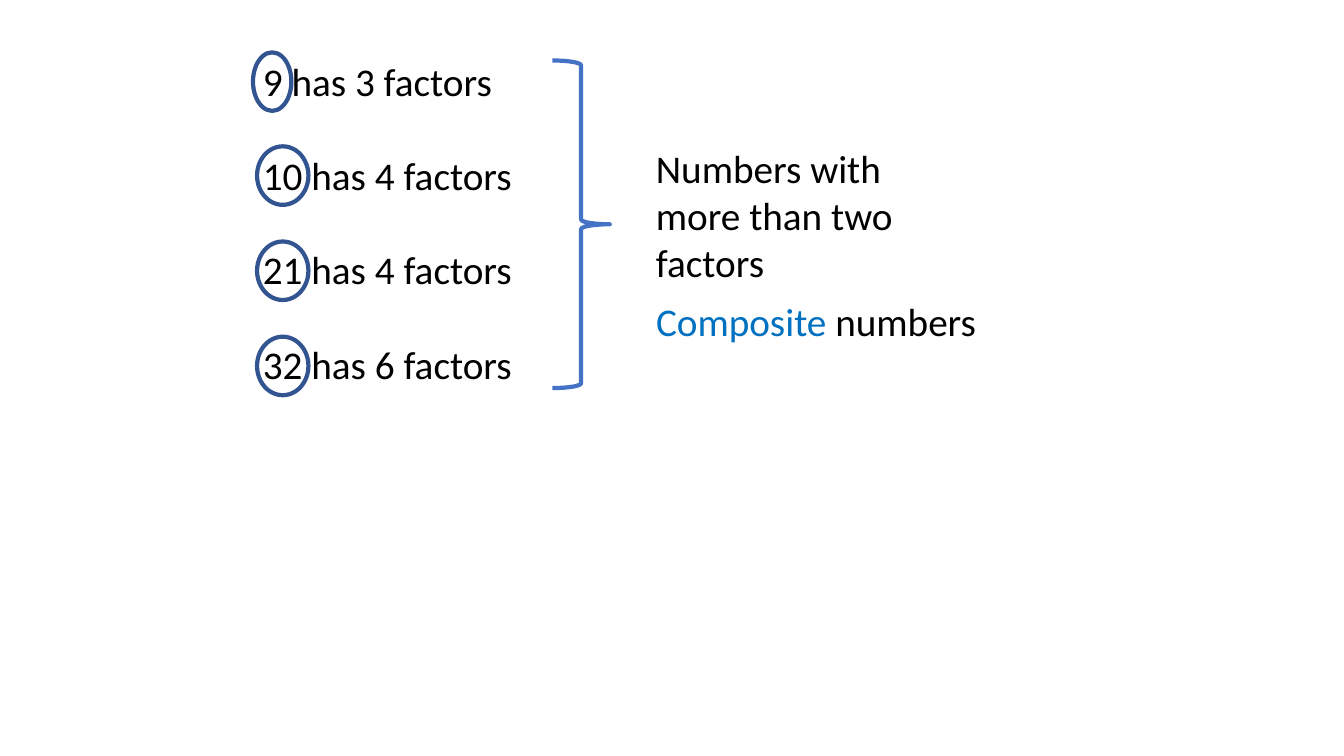
import dataclasses

import pptx
import pptx.dml.color
import pptx.enum.shapes
import pptx.slide
import pptx.util

Pt = pptx.util.Pt
SHAPES = pptx.enum.shapes.MSO_SHAPE

COLORS = {"text": "000000", "accent": "0070C0", "brace": "4472C4", "ring": "325491"}
FONT_NAME = "Calibri"
FONT_SIZE = 28
LINE_GAP = 33.7
RING_TOP = 104.5
RING_PITCH = 68


@dataclasses.dataclass(frozen=True)
class Box:
    left: float
    top: float
    width: float
    height: float

    def lengths(self) -> tuple[int, int, int, int]:
        return Pt(self.left), Pt(self.top), Pt(self.width), Pt(self.height)


@dataclasses.dataclass(frozen=True)
class Caption:
    box: Box
    lines: tuple[str, ...]
    gap: float = 0
    highlight: str = ""


@dataclasses.dataclass(frozen=True)
class Outline:
    box: Box
    preset: SHAPES
    color: str


def rgb(name: str) -> pptx.dml.color.RGBColor:
    return pptx.dml.color.RGBColor.from_string(COLORS[name])


def draw_caption(slide: pptx.slide.Slide, caption: Caption) -> None:
    frame = slide.shapes.add_textbox(*caption.box.lengths()).text_frame
    frame.text = "\n".join(caption.lines)
    frame.word_wrap = True
    for index, paragraph in enumerate(frame.paragraphs):
        paragraph.space_before = Pt(caption.gap if index else 0)
        if caption.highlight:
            rest = paragraph.text.removeprefix(caption.highlight)
            paragraph.text = caption.highlight
            paragraph.add_run().text = rest
        for run in paragraph.runs:
            run.font.name = FONT_NAME
            run.font.size = Pt(FONT_SIZE)
            run.font.color.rgb = rgb("accent" if run.text == caption.highlight else "text")


def draw_outline(slide: pptx.slide.Slide, outline: Outline) -> None:
    shape = slide.shapes.add_shape(outline.preset, *outline.box.lengths())
    shape.shadow.inherit = False
    shape.fill.background()
    shape.line.color.rgb = rgb(outline.color)
    shape.line.width = Pt(3)


FACTOR_COUNTS = {9: 3, 10: 4, 21: 4, 32: 6}

CAPTIONS = [
    Caption(
        Box(180.7, 37.4, 213.8, 244.8),
        tuple(f"{number} has {count} factors" for number, count in FACTOR_COUNTS.items()),
        gap=LINE_GAP,
    ),
    Caption(Box(461.5, 99.4, 213.8, 108.7), ("Numbers with more than two factors",)),
    Caption(Box(461.5, 208.8, 267.1, 41), ("Composite numbers",), highlight="Composite"),
]

OUTLINES = [
    Outline(Box(394.6, 43.2, 41, 234), SHAPES.RIGHT_BRACE, "brace"),
    Outline(Box(180.7, 37.4, 27.4, 41.8), SHAPES.OVAL, "ring"),
] + [
    Outline(Box(183.6, RING_TOP + RING_PITCH * row, 36.7, 41.8), SHAPES.OVAL, "ring")
    for row in range(len(FACTOR_COUNTS) - 1)
]


def main() -> None:
    presentation = pptx.Presentation()
    presentation.slide_width = Pt(960)
    presentation.slide_height = Pt(540)
    slide = presentation.slides.add_slide(presentation.slide_layouts[6])
    for caption in CAPTIONS:
        draw_caption(slide, caption)
    for outline in OUTLINES:
        draw_outline(slide, outline)
    presentation.save("out.pptx")


if __name__ == "__main__":
    main()
